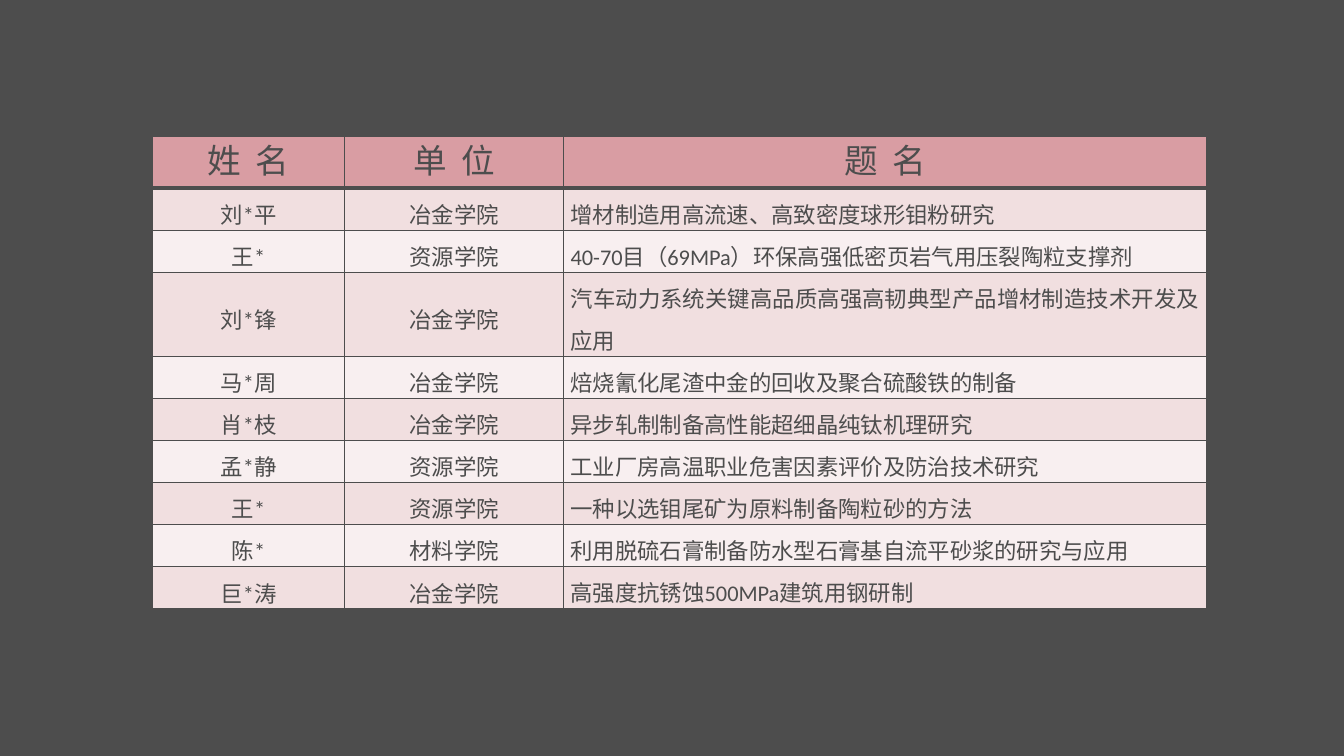
from dataclasses import dataclass

from lxml.etree import SubElement
from pptx import Presentation
from pptx.dml.color import RGBColor
from pptx.enum.text import MSO_ANCHOR, PP_ALIGN
from pptx.oxml.ns import qn
from pptx.slide import Slide
from pptx.table import Table, _Cell
from pptx.util import Inches, Pt


@dataclass(frozen=True)
class Theme:
    ink: str = "4D4D4D"
    header: str = "D99DA3"
    bands: tuple[str, str] = ("F1DFE0", "F8EFF0")
    font: str = "Calibri"
    header_size: int = 24
    body_size: int = 16
    line_spacing: int = 30
    header_tracking: int = 270  # hundredths of a point


@dataclass(frozen=True)
class Column:
    heading: str
    width: float
    align: PP_ALIGN
    anchor: MSO_ANCHOR


@dataclass(frozen=True)
class Entry:
    name: str
    school: str
    topic: str


THEME = Theme()
LEFT, TOP, ROW_HEIGHT = 1.51, 1.35, 0.41

COLUMNS = [
    Column("姓 名", 1.91, PP_ALIGN.CENTER, MSO_ANCHOR.MIDDLE),
    Column("单 位", 2.17, PP_ALIGN.CENTER, MSO_ANCHOR.MIDDLE),
    Column("题 名", 6.38, PP_ALIGN.JUSTIFY, MSO_ANCHOR.TOP),
]

ENTRIES = [
    Entry("刘*平", "冶金学院", "增材制造用高流速、高致密度球形钼粉研究"),
    Entry("王*", "资源学院", "40-70目（69MPa）环保高强低密页岩气用压裂陶粒支撑剂"),
    Entry("刘*锋", "冶金学院", "汽⻋动力系统关键高品质高强高韧典型产品增材制造技术开发及应用"),
    Entry("马*周", "冶金学院", "焙烧氰化尾渣中金的回收及聚合硫酸铁的制备"),
    Entry("肖*枝", "冶金学院", "异步轧制制备高性能超细晶纯钛机理研究"),
    Entry("孟*静", "资源学院", "工业厂房高温职业危害因素评价及防治技术研究"),
    Entry("王*", "资源学院", "一种以选钼尾矿为原料制备陶粒砂的方法"),
    Entry("陈*", "材料学院", "利用脱硫石膏制备防水型石膏基自流平砂浆的研究与应用"),
    Entry("巨*涛", "冶金学院", "高强度抗锈蚀500MPa建筑用钢研制"),
]


def set_borders(cell: _Cell, bottom: int = 1) -> None:
    """Outline a cell; widths are in points."""
    tc_pr = cell._tc.get_or_add_tcPr()
    for side, width in (("L", 1), ("R", 1), ("T", 1), ("B", bottom)):
        ln = SubElement(tc_pr, qn(f"a:ln{side}"), w=str(Pt(width)))
        fill = SubElement(ln, qn("a:solidFill"))
        SubElement(fill, qn("a:srgbClr"), val=THEME.ink)


def write_cell(cell: _Cell, text: str, size: int, align: PP_ALIGN,
               fill: str, tracking: int = 0) -> None:
    p = cell.text_frame.paragraphs[0]
    p.alignment = align
    p.line_spacing = Pt(THEME.line_spacing)
    r = p.add_run()
    r.text = text
    r.font.name = THEME.font
    r.font.size = Pt(size)
    r.font.bold = False
    r.font.color.rgb = RGBColor.from_string(THEME.ink)
    if tracking:
        r.font._element.set("spc", str(tracking))
    cell.fill.solid()
    cell.fill.fore_color.rgb = RGBColor.from_string(fill)


def fill_header(table: Table) -> None:
    for c, column in enumerate(COLUMNS):
        cell = table.cell(0, c)
        set_borders(cell, bottom=3)
        write_cell(cell, column.heading, THEME.header_size, PP_ALIGN.CENTER,
                   THEME.header, THEME.header_tracking)


def fill_entry(table: Table, row: int, entry: Entry) -> None:
    band = THEME.bands[(row - 1) % 2]
    texts = (entry.name, entry.school, entry.topic)
    for c, (column, text) in enumerate(zip(COLUMNS, texts)):
        cell = table.cell(row, c)
        cell.margin_left = cell.margin_right = Inches(0.07)
        cell.margin_top = cell.margin_bottom = 0
        cell.vertical_anchor = column.anchor
        set_borders(cell)
        write_cell(cell, text, THEME.body_size, column.align, band)


def add_award_table(slide: Slide) -> None:
    rows = len(ENTRIES) + 1
    width = sum(column.width for column in COLUMNS)
    table = slide.shapes.add_table(
        rows, len(COLUMNS), Inches(LEFT), Inches(TOP),
        Inches(width), Inches(rows * ROW_HEIGHT)).table
    table.first_row = table.horz_banding = False
    for c, column in enumerate(COLUMNS):
        table.columns[c].width = Inches(column.width)
    for row in table.rows:
        row.height = Inches(ROW_HEIGHT)
    fill_header(table)
    for i, entry in enumerate(ENTRIES, start=1):
        fill_entry(table, i, entry)


def main() -> None:
    prs = Presentation()
    prs.slide_width, prs.slide_height = Inches(13.33), Inches(7.5)
    slide = prs.slides.add_slide(prs.slide_layouts[6])

    # Dark background
    slide.background.fill.solid()
    slide.background.fill.fore_color.rgb = RGBColor.from_string(THEME.ink)

    # Project list
    add_award_table(slide)
    prs.save("out.pptx")


if __name__ == "__main__":
    main()
